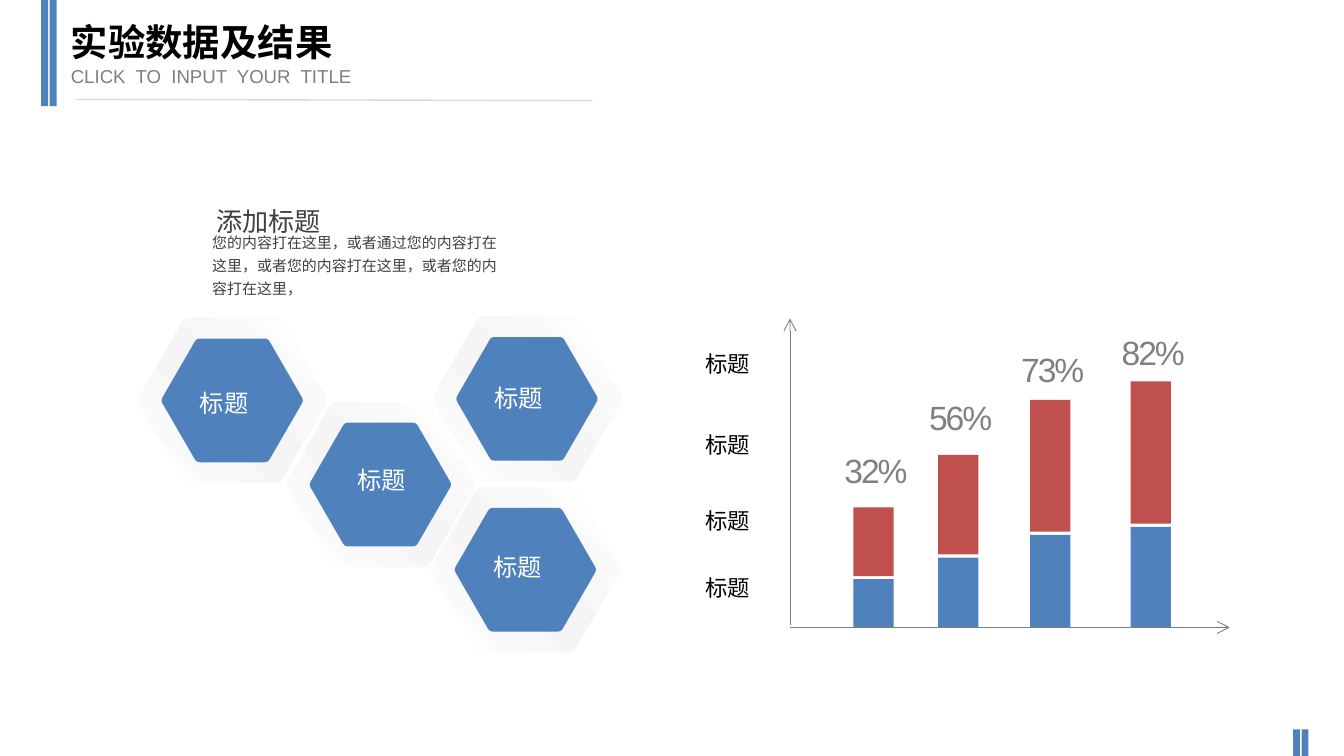
import math

import pptx
import pptx.dml.color
import pptx.enum.shapes
import pptx.enum.text
import pptx.oxml
import pptx.oxml.ns
import pptx.util

Cm = pptx.util.Cm
Pt = pptx.util.Pt
CJK = "Noto Sans CJK SC"
BLUE, RED, GREY, WHITE = "4F81BD", "C0504D", "808080", "FFFFFF"
NAMESPACE = 'xmlns:a="http://schemas.openxmlformats.org/drawingml/2006/main"'


def color(hex_text):
    return pptx.dml.color.RGBColor.from_string(hex_text)


def add_xml(parent, tag, attributes=""):
    parent.append(pptx.oxml.parse_xml(f"<a:{tag} {NAMESPACE} {attributes}/>"))


def add_text(page, box, text, size=12, font=CJK, fill="000000", bold=False,
             inset=(0.25, 0.13), anchor="MIDDLE", line_points=None, tracking=None):
    left, top, width, height = box
    frame = page.shapes.add_textbox(Cm(left), Cm(top), Cm(width), Cm(height)).text_frame
    frame.word_wrap = True
    frame.margin_left = frame.margin_right = Cm(inset[0])
    frame.margin_top = frame.margin_bottom = Cm(inset[1])
    frame.vertical_anchor = getattr(pptx.enum.text.MSO_ANCHOR, anchor)
    para = frame.paragraphs[0]
    if line_points:
        para.line_spacing = Pt(line_points)
    span = para.add_run()
    span.text = text
    span.font.size = Pt(size)
    span.font.name = font
    span.font.bold = bold
    span.font.color.rgb = color(fill)
    properties = span.font._element
    add_xml(properties, "ea", f'typeface="{font}"')
    if tracking:
        properties.set("spc", str(round(tracking * 100)))


def add_bar(page, left, top, width, height, fill):
    bar = page.shapes.add_shape(pptx.enum.shapes.MSO_SHAPE.RECTANGLE,
                                Cm(left), Cm(top), Cm(width), Cm(height))
    bar.shadow.inherit = False
    bar.fill.solid()
    bar.fill.fore_color.rgb = color(fill)
    bar.line.fill.background()


def add_line(page, start, end, stroke, width, arrow=False):
    line = page.shapes.add_connector(pptx.enum.shapes.MSO_CONNECTOR.STRAIGHT,
                                     *(Cm(value) for value in (*start, *end)))
    line.line.color.rgb = color(stroke)
    line.line.width = Pt(width)
    if arrow:
        add_xml(line.line._get_or_add_ln(), "tailEnd", 'type="arrow"')
    add_xml(line._element.spPr, "effectLst")


def hexagon_points(center_x, center_y, radius, cut=0.05, steps=4):
    """Flat-topped hexagon whose corners are rounded by quadratic curves."""
    corners = [(center_x + radius * math.cos(math.radians(60 * turn)),
                center_y + radius * math.sin(math.radians(60 * turn)))
               for turn in range(6)]
    points = []
    for index, corner in enumerate(corners):
        before, after = corners[index - 1], corners[(index + 1) % 6]
        for step in range(steps + 1):
            t = step / steps
            points.append(tuple(
                Cm(c + cut * ((1 - t) ** 2 * (b - c) + t ** 2 * (a - c)))
                for b, c, a in zip(before, corner, after)))
    return points


def add_hexagon(page, center, radius, fill=None):
    """Without a fill colour the hexagon gets a soft diagonal sheen."""
    points = hexagon_points(*center, radius)
    builder = page.shapes.build_freeform(*points[0])
    builder.add_line_segments(points[1:], close=True)
    shape = builder.convert_to_shape()
    shape.shadow.inherit = False
    shape.line.fill.background()
    if fill:
        shape.fill.solid()
        shape.fill.fore_color.rgb = color(fill)
        return
    shape.fill.gradient()
    shape.fill.gradient_angle = 45
    stops = shape._element.spPr.find(".//" + pptx.oxml.ns.qn("a:gsLst"))
    for stop in list(stops):
        stops.remove(stop)
    for percent, shade in ((0, WHITE), (47, "F5F5F5"), (100, WHITE)):
        stops.append(pptx.oxml.parse_xml(
            f'<a:gs {NAMESPACE} pos="{percent * 1000}"><a:srgbClr val="{shade}"/></a:gs>'))


def add_stripes(page, left, top, height):
    for index in range(2):
        add_bar(page, left + index * 0.16, top, 0.13, height, BLUE)


def add_header(page, left, top):
    add_stripes(page, left, top, 2.01)
    add_line(page, (left + 0.67, top + 1.88), (left + 10.42, top + 1.9), "D8D8D8", 0.75)
    add_text(page, (left + 0.31, top + 1.09, 8, 0.69), "CLICK  TO  INPUT  YOUR  TITLE",
             size=10, font="Arial", fill="7F7F7F")
    add_text(page, (left + 0.31, top + 0.15, 10.26, 1.27), "实验数据及结果",
             size=20, font="Arial", bold=True)


def add_bar_chart(page, left, top, width, height):
    axis_x, base = left + 1.85, top + height
    bar_width, gap = 0.76, 0.06
    # Bars: centre, lower height, upper height, top of the value label, value
    bars = [
        (3.43, 0.91, 1.3, 2.39, "32%"),
        (5.03, 1.32, 1.88, 1.37, "56%"),
        (6.77, 1.75, 2.49, 0.48, "73%"),
        (8.67, 1.9, 2.69, 0.15, "82%"),
    ]
    for center, lower, upper, label_top, value in bars:
        bar_left = left + center - bar_width / 2
        add_bar(page, bar_left, base - lower, bar_width, lower, BLUE)
        add_bar(page, bar_left, base - lower - gap - upper, bar_width, upper, RED)
        add_text(page, (left + center - 0.75, top + label_top, 1.85, 0.97), value,
                 size=18, font="Arial", fill=GREY, inset=(0.2, 0.1), tracking=-1.1)
    # Axes
    add_line(page, (axis_x, base), (left + width, base), GREY, 0.5, arrow=True)
    add_line(page, (axis_x, base - 0.05), (axis_x, top), GREY, 0.5, arrow=True)
    # Axis labels
    for label_top in (0.48, 2.01, 3.45, 4.7):
        add_text(page, (left, top + label_top, 1.85, 0.76), "标题")


def add_honeycomb(page, left, top):
    # Cells: centre, then offset of the label from it
    cells = [
        ((1.8, 1.6), (-0.86, -0.36)),
        ((4.6, 3.19), (-0.69, -0.5)),
        ((7.37, 1.57), (-0.86, -0.43)),
        ((7.34, 4.8), (-0.86, -0.46)),
    ]
    for (x, y), (label_x, label_y) in cells:
        center = (left + x, top + y)
        add_hexagon(page, center, 1.82, WHITE)
        add_hexagon(page, center, 1.8)
        add_hexagon(page, center, 1.35, BLUE)
        add_text(page, (center[0] + label_x, center[1] + label_y, 2.21, 0.81), "标题",
                 size=13, fill=WHITE)


def add_description(page, left, top):
    add_text(page, (left, top + 0.63, 6.07, 1.55),
             "您的内容打在这里，或者通过您的内容打在这里，或者您的内容打在这里，或者您的内容打在这里，",
             size=8, fill="404040", anchor="TOP", line_points=12.3)
    add_text(page, (left + 0.08, top, 2.64, 0.79), "添加标题", size=14, fill="404040",
             inset=(0.25, 0), anchor="TOP", line_points=26)


def main():
    deck = pptx.Presentation()
    deck.slide_width, deck.slide_height = Cm(25.4), Cm(14.29)
    page = deck.slides.add_slide(deck.slide_layouts[6])
    add_header(page, 0.78, 0)
    add_stripes(page, 24.44, 13.79, 0.5)
    add_bar_chart(page, 13.08, 6.02, 10.16, 5.84)
    add_honeycomb(page, 2.59, 5.97)
    add_description(page, 3.76, 3.56)
    deck.save("out.pptx")


if __name__ == "__main__":
    main()
